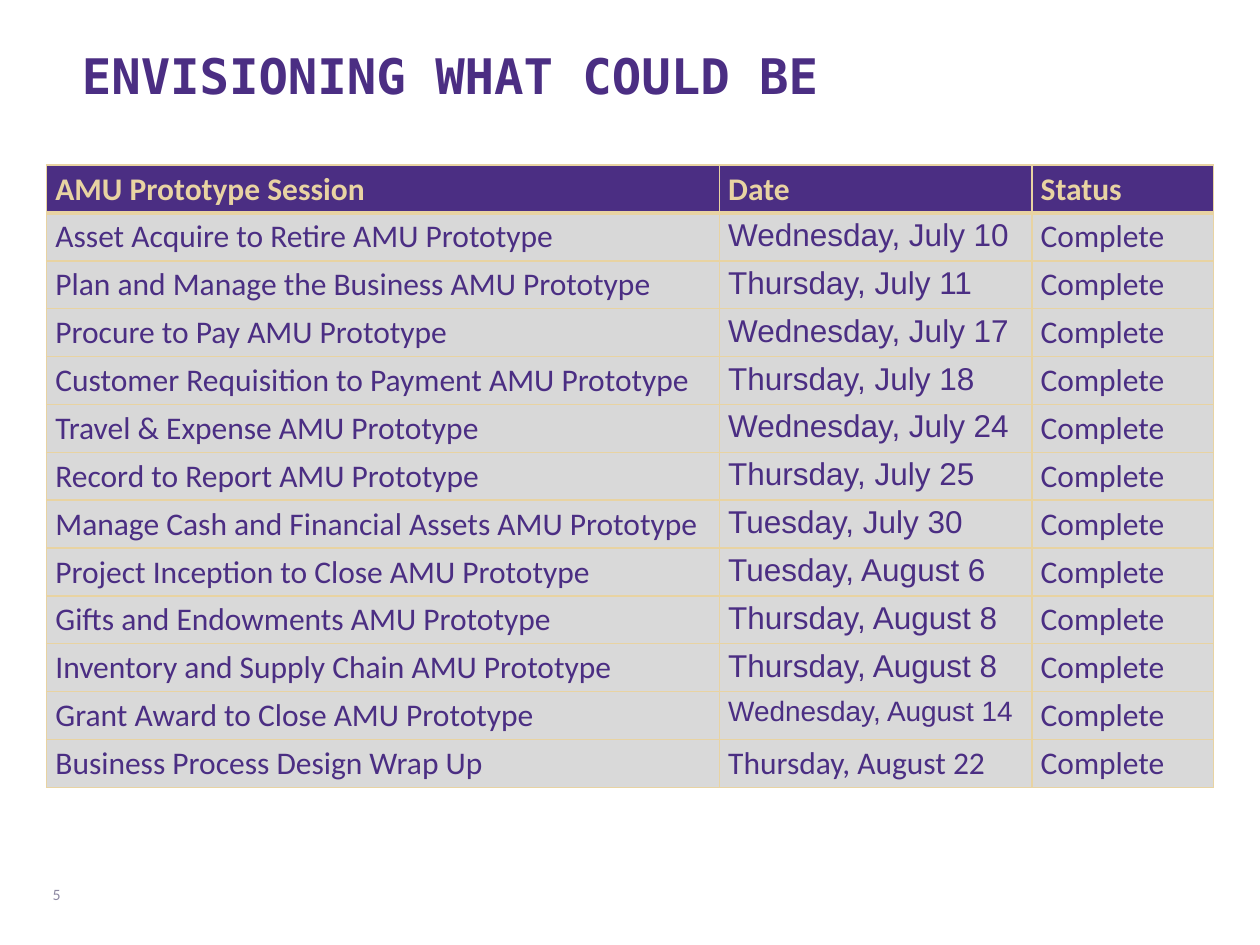
from lxml import etree
from pptx import Presentation
from pptx import util as u
from pptx.dml.color import RGBColor
from pptx.enum import text
from pptx.oxml import ns

TITLE = "ENVISIONING WHAT COULD BE"
PAGE_NUMBER = "5"
HEADERS = ("AMU Prototype Session", "Date", "Status")
SESSIONS = [
    ("Asset Acquire to Retire AMU Prototype", "Wednesday, July 10"),
    ("Plan and Manage the Business AMU Prototype", "Thursday, July 11"),
    ("Procure to Pay AMU Prototype", "Wednesday, July 17"),
    ("Customer Requisition to Payment AMU Prototype", "Thursday, July 18"),
    ("Travel & Expense AMU Prototype", "Wednesday, July 24"),
    ("Record to Report AMU Prototype", "Thursday, July 25"),
    ("Manage Cash and Financial Assets AMU Prototype", "Tuesday, July 30"),
    ("Project Inception to Close AMU Prototype", "Tuesday, August 6"),
    ("Gifts and Endowments AMU Prototype", "Thursday, August 8"),
    ("Inventory and Supply Chain AMU Prototype", "Thursday, August 8"),
    ("Grant Award to Close AMU Prototype", "Wednesday, August 14"),
    ("Business Process Design Wrap Up", "Thursday, August 22"),
]
STATUS = "Complete"
COLUMN_WIDTHS = (5.34, 2.48, 1.44)
ROW_HEIGHT = 0.38
FIRST_DARKER_ROW = 6
COLORS = {"purple": "4B2E83", "gold": "E8D3A2", "light": "D8D8D8",
          "gray": "D9D9D9", "muted": "8D88A2"}
CELL_FORMAT = {
    "margin_left": u.Inches(0.07), "margin_right": u.Inches(0.07),
    "margin_top": u.Inches(0.04), "margin_bottom": u.Inches(0.03),
    "vertical_anchor": text.MSO_ANCHOR.TOP,
}
TITLE_FRAME = {"word_wrap": True, "vertical_anchor": text.MSO_ANCHOR.BOTTOM}
NUMBER_FRAME = {
    "word_wrap": True, "vertical_anchor": text.MSO_ANCHOR.MIDDLE,
    "margin_left": u.Inches(0.07), "margin_right": u.Inches(0.07),
    "margin_top": u.Inches(0.04), "margin_bottom": u.Inches(0.04),
}


def apply(target, values):
    for name, value in values.items():
        setattr(target, name, value)


def place(box, left, top, width, height):
    apply(box, {"left": u.Inches(left), "top": u.Inches(top),
                "width": u.Inches(width), "height": u.Inches(height)})


def write(frame, words, size, color, name="Calibri", bold=False,
          align=text.PP_ALIGN.LEFT):
    para = frame.paragraphs[0]
    para.alignment = align
    span = para.add_run()
    span.text = words
    apply(span.font, {"size": u.Pt(size), "name": name, "bold": bold})
    span.font.color.rgb = RGBColor.from_string(COLORS[color])


def add_border(cell, side, points):
    properties = cell._tc.get_or_add_tcPr()
    line = etree.SubElement(properties, ns.qn(f"a:ln{side}"), w=str(u.Pt(points)))
    fill = etree.SubElement(line, ns.qn("a:solidFill"))
    etree.SubElement(fill, ns.qn("a:srgbClr"), val=COLORS["gold"])


def fill_cell(cell, words, row, column):
    header = row == 0
    apply(cell, CELL_FORMAT)
    thick_side = {0: "B", 1: "T"}.get(row)
    for side in "LRTB":
        add_border(cell, side, 3 if side == thick_side else 1)
    cell.fill.solid()
    shade = "purple" if header else "light" if row < FIRST_DARKER_ROW else "gray"
    cell.fill.fore_color.rgb = RGBColor.from_string(COLORS[shade])
    arial = column == 1 and 0 < row < len(SESSIONS)
    write(cell.text_frame, words, 16 if words == "Wednesday, August 14" else 18,
          "gold" if header else "purple", "Arial" if arial else "Calibri", header)


def main():
    deck = Presentation()
    apply(deck, {"slide_width": u.Inches(10), "slide_height": u.Inches(7.5)})
    page = deck.slides.add_slide(deck.slide_layouts[5])

    title = page.shapes.title
    place(title, 0.55, 0.29, 8.83, 0.59)
    apply(title.text_frame, TITLE_FRAME)
    write(title.text_frame, TITLE, 28, "purple", "DejaVu Sans Mono", True)

    number = page.shapes.add_textbox(0, 0, 0, 0)
    place(number, 0.2, 6.9, 0.35, 0.4)
    apply(number.text_frame, NUMBER_FRAME)
    write(number.text_frame, PAGE_NUMBER, 9, "muted", align=text.PP_ALIGN.RIGHT)

    rows = [HEADERS] + [(*session, STATUS) for session in SESSIONS]
    table = page.shapes.add_table(
        len(rows), len(HEADERS), u.Inches(0.37), u.Inches(1.31),
        u.Inches(sum(COLUMN_WIDTHS)), u.Inches(ROW_HEIGHT * len(rows))).table
    for column, width in zip(table.columns, COLUMN_WIDTHS):
        column.width = u.Inches(width)
    for row, values in enumerate(rows):
        table.rows[row].height = u.Inches(ROW_HEIGHT)
        for column, words in enumerate(values):
            fill_cell(table.cell(row, column), words, row, column)

    deck.save("out.pptx")


if __name__ == "__main__":
    main()
